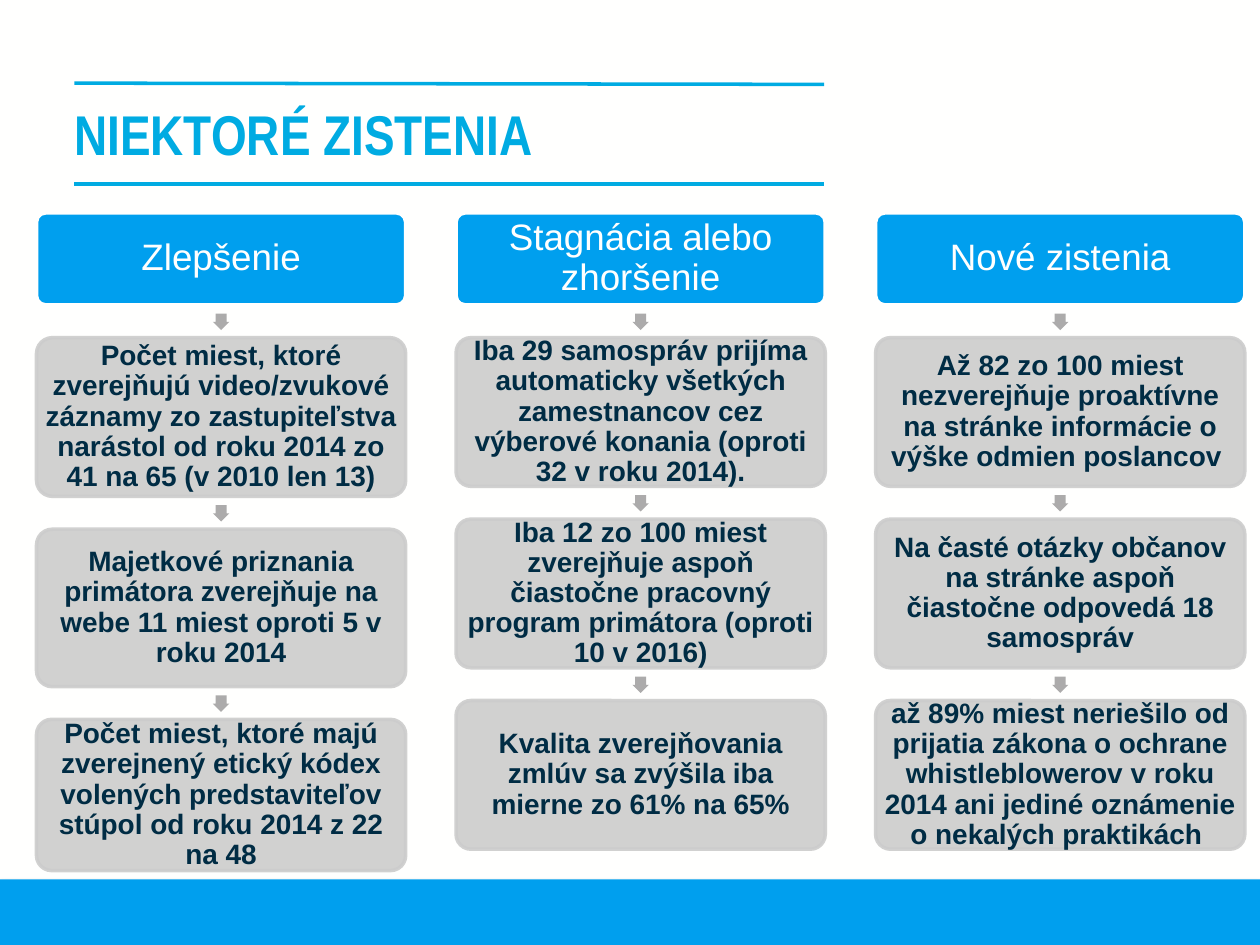
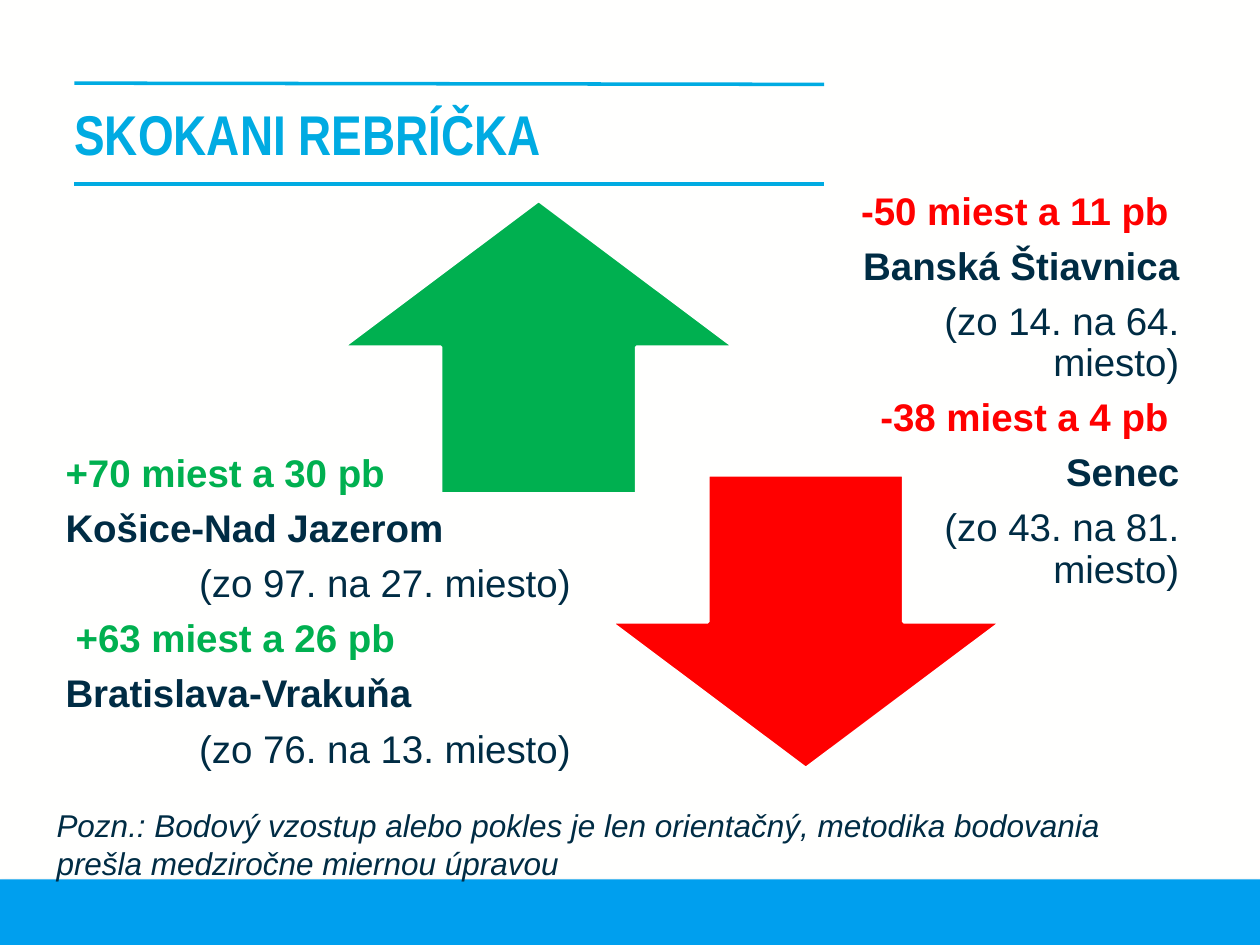
"""Build two slides on city transparency findings and ranking movers."""
from dataclasses import dataclass
from typing import Optional

from lxml.etree import SubElement
from pptx import Presentation
from pptx.dml.color import RGBColor
from pptx.enum.shapes import MSO_CONNECTOR, MSO_SHAPE as SHAPE
from pptx.enum.text import MSO_ANCHOR as ANCHOR, PP_ALIGN as ALIGN
from pptx.oxml.ns import qn
from pptx.util import Pt

PX = 9144
BLUE, CYAN, NAVY, PAPER = "009FEE", "00ABE2", "002C44", "FFFFFE"
CARD_GREY, ARROW_GREY, GREEN, RED = "CCCCCC", "ACABAB", "00B050", "FF0000"
COLUMN_LEFT, COLUMN_STEP, COLUMN_WIDTH = 29, 333, 293
HEADER_TOP, HEADER_HEIGHT, CARD_GAP, ARROW_SIZE = 169, 73, 26, 13
TAB_INDENT, SPACE_INDENT = 106, 8


@dataclass(frozen=True)
class Box:
    left: int
    top: int
    width: int
    height: int

    def emu(self) -> tuple[int, ...]:
        return tuple(v * PX for v in (self.left, self.top, self.width, self.height))


@dataclass(frozen=True)
class Style:
    size: int
    color: str = NAVY
    bold: bool = False
    italic: bool = False
    font: str = "Arial"


@dataclass(frozen=True)
class Line:
    text: str
    style: Style
    indent: int = 0


@dataclass(frozen=True)
class Column:
    header: str
    cards: tuple[str, ...]
    heights: tuple[int, ...] = (118, 118, 118)


@dataclass(frozen=True)
class Mover:
    change: str
    city: str
    places: str
    indent: int = 0


TITLE = Style(32, CYAN, bold=True, font="Arial Narrow")
HEADER = Style(21, PAPER)
CARD = Style(16, bold=True)
NOTE = Style(18, italic=True)

COLUMNS = (
    Column("Zlepšenie", (
        "Počet miest, ktoré zverejňujú video/zvukové záznamy zo zastupiteľstva "
        "narástol od roku 2014 zo 41 na 65 (v 2010 len 13)",
        "Majetkové priznania primátora zverejňuje na webe 11 miest oproti 5 v roku 2014",
        "Počet miest, ktoré majú zverejnený etický kódex volených predstaviteľov "
        "stúpol od roku 2014 z 22 na 48",
    ), (126, 125, 120)),
    Column("Stagnácia alebo zhoršenie", (
        "Iba 29 samospráv prijíma automaticky všetkých zamestnancov cez "
        "výberové konania (oproti 32 v roku 2014).",
        "Iba 12 zo 100 miest zverejňuje aspoň čiastočne pracovný program "
        "primátora (oproti 10 v 2016)",
        "Kvalita zverejňovania zmlúv sa zvýšila iba mierne zo 61% na 65%",
    )),
    Column("Nové zistenia", (
        "Až 82 zo 100 miest nezverejňuje proaktívne na stránke informácie o "
        "výške odmien poslancov ",
        "Na časté otázky občanov na stránke aspoň čiastočne odpovedá 18 samospráv",
        "až 89% miest neriešilo od prijatia zákona o ochrane whistleblowerov "
        "v roku 2014 ani jediné oznámenie o nekalých praktikách ",
    )),
)

RISERS = (
    Mover("+70 miest a 30 pb", "Košice-Nad Jazerom", "(zo 97. na 27. miesto)"),
    Mover("+63 miest a 26 pb", "Bratislava-Vrakuňa", "(zo 76. na 13. miesto)", SPACE_INDENT),
)
FALLERS = (
    Mover("-50 miest a 11 pb ", "Banská Štiavnica", "(zo 14. na 64. miesto)"),
    Mover("-38 miest a 4 pb ", "Senec", "(zo 43. na 81. miesto)"),
)


def rgb(color: str) -> RGBColor:
    return RGBColor.from_string(color)


def set_alpha(fill, percent: int) -> None:
    color = fill._xPr.find(qn("a:solidFill"))[0]
    SubElement(color, qn("a:alpha")).set("val", str(percent * 1000))


def add_shape(slide, kind, box: Box, fill: str, line: Optional[str] = None,
              alpha: int = 100, adjust: tuple[float, ...] = ()):
    sp = slide.shapes.add_shape(kind, *box.emu())
    sp.shadow.inherit = False
    for i, value in enumerate(adjust):
        sp.adjustments[i] = value
    sp.fill.solid()
    sp.fill.fore_color.rgb = rgb(fill)
    fills = [sp.fill]
    if line:
        sp.line.color.rgb = rgb(line)
        sp.line.width = Pt(2)
        fills.append(sp.line.fill)
    else:
        sp.line.fill.background()
    if alpha < 100:
        for item in fills:
            set_alpha(item, alpha)
    return sp


def write(sp, lines: list[Line], insets: tuple[int, int, int, int], align=ALIGN.LEFT,
          anchor=ANCHOR.MIDDLE, spacing: float = 1.0) -> None:
    tf = sp.text_frame
    tf.word_wrap = True
    tf.vertical_anchor = anchor
    tf.margin_left, tf.margin_top, tf.margin_right, tf.margin_bottom = (
        v * PX for v in insets)
    for i, line in enumerate(lines):
        p = tf.add_paragraph() if i else tf.paragraphs[0]
        p.text = line.text
        p.alignment = align
        p.line_spacing = spacing
        if i < len(lines) - 1:
            p.space_after = Pt(round(line.style.size * 0.35, 1))
        if line.indent:
            p._p.get_or_add_pPr().set("marL", str(line.indent * PX))
        for r in p.runs:
            font, style = r.font, line.style
            font.name, font.size = style.font, Pt(style.size)
            font.bold, font.italic = style.bold, style.italic
            font.color.rgb = rgb(style.color)


def add_text(slide, box: Box, lines: list[Line], insets: tuple[int, int, int, int],
             **layout) -> None:
    write(slide.shapes.add_textbox(*box.emu()), lines, insets, **layout)


def add_rule(slide, left: int, top: int, right: int, bottom: int) -> None:
    cxn = slide.shapes.add_connector(
        MSO_CONNECTOR.STRAIGHT, *(v * PX for v in (left, top, right, bottom)))
    cxn.line.color.rgb = rgb(CYAN)
    cxn.line.width = Pt(2)
    SubElement(cxn._element.spPr, qn("a:effectLst"))


def add_band(slide) -> None:
    band = add_shape(slide, SHAPE.RECTANGLE, Box(0, 698, 1000, 52), BLUE)
    effects = band._element.spPr.find(qn("a:effectLst"))
    shadow = SubElement(effects, qn("a:outerShdw"), blurRad=str(Pt(3.1)),
                        dist=str(Pt(1.8)), dir="5400000", rotWithShape="0")
    color = SubElement(shadow, qn("a:srgbClr"), val="000000")
    SubElement(color, qn("a:alpha"), val="35000")


def add_slide(prs, title: str):
    slide = prs.slides.add_slide(prs.slide_layouts[6])
    slide.background.fill.solid()
    slide.background.fill.fore_color.rgb = rgb(PAPER)
    add_band(slide)
    add_rule(slide, 59, 66, 654, 67)
    add_rule(slide, 59, 146, 654, 146)
    add_text(slide, Box(59, 62, 693, 87), [Line(title, TITLE)], (0, 0, 0, 0))
    return slide


def add_column(slide, left: int, column: Column) -> None:
    header = add_shape(slide, SHAPE.ROUNDED_RECTANGLE,
                       Box(left, HEADER_TOP, COLUMN_WIDTH, HEADER_HEIGHT),
                       BLUE, PAPER, adjust=(0.1,))
    write(header, [Line(column.header, HEADER)], (3, 3, 3, 3), ALIGN.CENTER, spacing=0.9)
    arrow_left = left + (COLUMN_WIDTH - ARROW_SIZE) // 2
    top = HEADER_TOP + HEADER_HEIGHT
    for text, height in zip(column.cards, column.heights):
        arrow_top = top + (CARD_GAP - ARROW_SIZE + 1) // 2
        add_shape(slide, SHAPE.DOWN_ARROW,
                  Box(arrow_left, arrow_top, ARROW_SIZE, ARROW_SIZE),
                  ARROW_GREY, adjust=(0.667, 0.5))
        top += CARD_GAP
        card = add_shape(slide, SHAPE.ROUNDED_RECTANGLE,
                         Box(left, top, COLUMN_WIDTH, height),
                         CARD_GREY, CARD_GREY, alpha=90, adjust=(0.1,))
        write(card, [Line(text, CARD)], (2, 2, 2, 2), ALIGN.CENTER, spacing=0.9)
        top += height


def add_movers(slide, arrow, arrow_box: Box, text_box: Box, color: str,
               movers: tuple[Mover, ...], align) -> None:
    add_shape(slide, arrow, arrow_box, color, PAPER)
    lines = []
    for mover in movers:
        lines += [Line(mover.change, Style(22, color, bold=True), mover.indent),
                  Line(mover.city, Style(22, bold=True)),
                  Line(mover.places, Style(22), TAB_INDENT)]
    add_text(slide, text_box, lines, (17, 0, 17, 17), align=align, spacing=0.9)


def main() -> None:
    prs = Presentation()
    prs.slide_width, prs.slide_height = 1000 * PX, 750 * PX

    findings = add_slide(prs, "NIEKTORÉ ZISTENIA")
    for i, column in enumerate(COLUMNS):
        add_column(findings, COLUMN_LEFT + i * COLUMN_STEP, column)

    ranking = add_slide(prs, "SKOKANI REBRÍČKA")
    add_movers(ranking, SHAPE.UP_ARROW, Box(272, 159, 311, 233),
               Box(35, 355, 489, 280), GREEN, RISERS, ALIGN.LEFT)
    add_movers(ranking, SHAPE.DOWN_ARROW, Box(484, 377, 311, 233),
               Box(550, 170, 403, 299), RED, FALLERS, ALIGN.RIGHT)
    note = ("Pozn.: Bodový vzostup alebo pokles je len orientačný, metodika bodovania "
            "prešla medziročne miernou úpravou")
    add_text(ranking, Box(35, 635, 921, 71), [Line(note, NOTE)], (10, 5, 10, 5),
             anchor=ANCHOR.TOP)

    prs.save("out.pptx")


if __name__ == "__main__":
    main()
